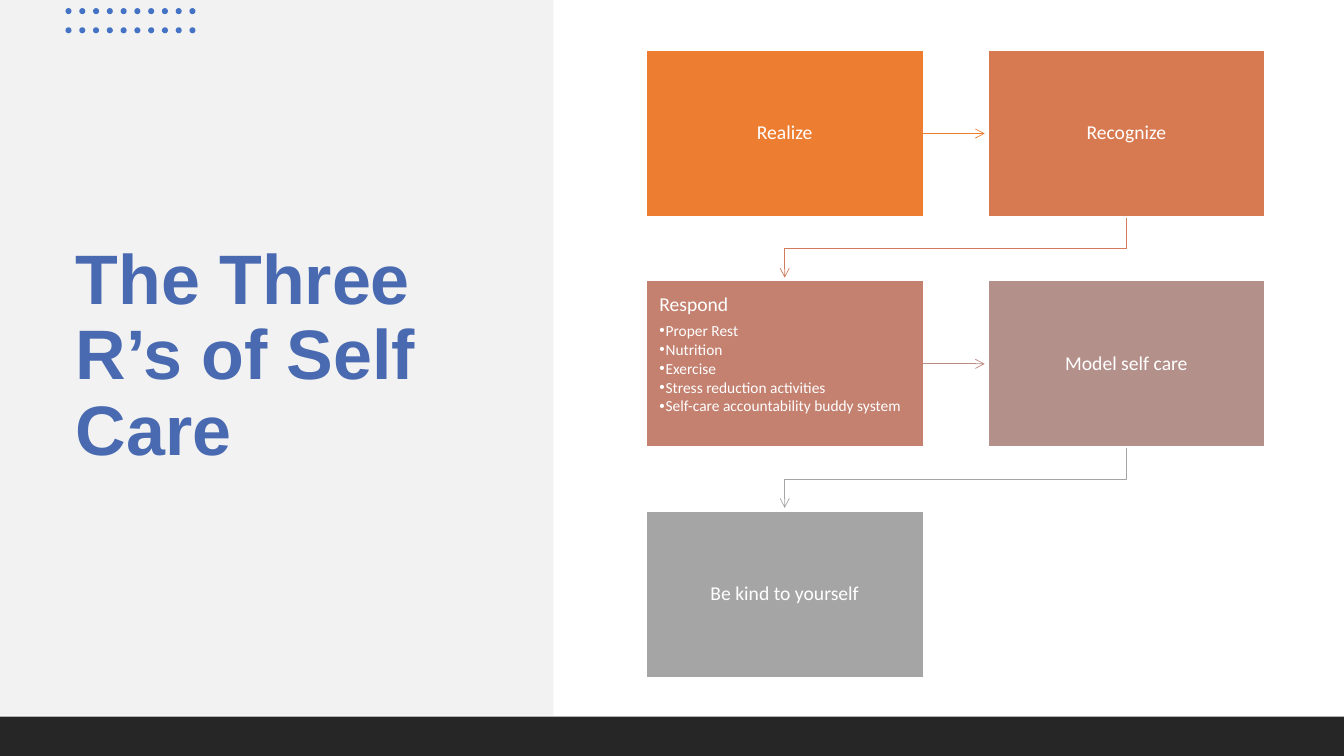
"""Build the self care slide: a title panel beside a snaking flow of cards."""
from dataclasses import dataclass
from itertools import product

from lxml.etree import SubElement
from pptx import Presentation
from pptx.dml.color import RGBColor
from pptx.enum.shapes import MSO_CONNECTOR, MSO_SHAPE
from pptx.enum.text import MSO_ANCHOR, MSO_AUTO_SIZE, PP_ALIGN
from pptx.oxml.ns import qn
from pptx.shapes.base import BaseShape
from pptx.slide import Slide
from pptx.util import Pt

LEFT, TOP = 461.5, 36
WIDE, HIGH = 198, 118.8
STEP_X, STEP_Y = 244.1, 164.5
GAP = 2.2


@dataclass(frozen=True)
class Card:
    text: str
    fill: str
    line: str = ""
    items: tuple[str, ...] = ()


@dataclass(frozen=True)
class Block:
    left: float
    top: float
    wide: float
    high: float
    fill: str
    kind: MSO_SHAPE = MSO_SHAPE.RECTANGLE


CARDS = (
    Card("Realize", "ED7D31", "ED7D31"),
    Card("Recognize", "D87A51", "D17B5C"),
    Card("Respond", "C48170", "B98A82", (
        "Proper Rest",
        "Nutrition",
        "Exercise",
        "Stress reduction activities",
        "Self-care accountability buddy system",
    )),
    Card("Model self care", "B4908B", "A5A5A5"),
    Card("Be kind to yourself", "A5A5A5"),
)
PANELS = (
    Block(0, 0, 395.3, 511.2, "F2F2F2"),
    Block(0, 511.9, 960, 28.1, "262626"),
)
DOTS = tuple(
    Block(46.8 + 9.84 * col, 5.8 + 13.7 * row, 4.3, 4.3, "4472C4", MSO_SHAPE.OVAL)
    for col, row in product(range(10), range(2))
)


def color(code: str) -> RGBColor:
    return RGBColor.from_string(code)


def paint(shape: BaseShape, code: str) -> None:
    shape.fill.solid()
    shape.fill.fore_color.rgb = color(code)


def place(shape: BaseShape, left: float, top: float, wide: float, high: float) -> None:
    shape.left, shape.top = Pt(left), Pt(top)
    shape.width, shape.height = Pt(wide), Pt(high)


def raise_top(slide: Slide, shape: BaseShape) -> None:
    slide.shapes.element.append(shape.element)


def add_block(slide: Slide, block: Block) -> None:
    shape = slide.shapes.add_shape(
        block.kind, Pt(block.left), Pt(block.top), Pt(block.wide), Pt(block.high))
    shape.shadow.inherit = False
    paint(shape, block.fill)
    shape.line.fill.background()


def set_title(slide: Slide) -> None:
    title = slide.shapes.title
    raise_top(slide, title)
    place(title, 46.8, 95, 305.3, 320.4)
    frame = title.text_frame
    frame.text = "The Three R’s of Self Care"
    frame.auto_size = MSO_AUTO_SIZE.NONE
    frame.vertical_anchor = MSO_ANCHOR.MIDDLE
    para = frame.paragraphs[0]
    para.alignment = PP_ALIGN.LEFT
    para.line_spacing = 0.9
    font = para.runs[0].font
    font.name, font.size, font.bold = "Arial", Pt(50), True
    font.color.rgb = color("496AB1")


def corner(index: int) -> tuple[float, float]:
    row, col = divmod(index, 2)
    return LEFT + STEP_X * col, TOP + STEP_Y * row


def add_card(slide: Slide, index: int, card: Card) -> BaseShape:
    if card.items:
        shape = slide.placeholders[1]
        raise_top(slide, shape)
    else:
        shape = slide.shapes.add_shape(MSO_SHAPE.RECTANGLE, 0, 0, 0, 0)
        shape.shadow.inherit = False
    place(shape, *corner(index), WIDE, HIGH)
    paint(shape, card.fill)
    shape.line.color.rgb = color("FFFFFF")
    shape.line.width = Pt(1)
    frame = shape.text_frame
    frame.text = "\n".join((card.text, *card.items))
    frame.word_wrap = True
    frame.auto_size = MSO_AUTO_SIZE.NONE
    frame.vertical_anchor = MSO_ANCHOR.TOP if card.items else MSO_ANCHOR.MIDDLE
    frame.margin_left = frame.margin_right = Pt(9.4)
    frame.margin_top = frame.margin_bottom = Pt(10.1)
    for rank, para in enumerate(frame.paragraphs):
        size, after = (11, 1.65) if rank else (14, 4.9)
        props = para._p.get_or_add_pPr()
        props.set("marL", str(Pt(4.5) if rank else 0))
        props.set("indent", str(Pt(-4.5) if rank else 0))
        if rank:
            para.level = 1
            SubElement(props, qn("a:buChar")).set("char", "•")
        else:
            SubElement(props, qn("a:buNone"))
        para.alignment = PP_ALIGN.LEFT if card.items else PP_ALIGN.CENTER
        para.line_spacing = 0.9
        para.space_before, para.space_after = Pt(0), Pt(after)
        font = para.runs[0].font
        font.name, font.size = "Calibri", Pt(size)
        font.color.rgb = color("FFFFFF")
    return shape


def add_link(slide: Slide, index: int, box: BaseShape, code: str) -> None:
    left, top = corner(index)
    if index % 2 == 0:
        mid = Pt(top + HIGH / 2)
        link = slide.shapes.add_connector(
            MSO_CONNECTOR.STRAIGHT, Pt(left + WIDE), mid, Pt(left + STEP_X - GAP), mid)
        link.begin_connect(box, 3)
        SubElement(link.element.spPr, qn("a:effectLst"))
    else:
        start, base = left + WIDE / 2, top + HIGH
        end, turn = start - STEP_X, top + (HIGH + STEP_Y) / 2
        path_pen = slide.shapes.build_freeform(Pt(start), Pt(base + 0.6))
        path_pen.add_line_segments(
            [(Pt(start), Pt(turn)), (Pt(end), Pt(turn)), (Pt(end), Pt(top + STEP_Y - GAP))],
            close=False)
        link = path_pen.convert_to_shape()
        link.shadow.inherit = False
        link.fill.background()
    link.line.color.rgb = color(code)
    link.line.width = Pt(0.5)
    SubElement(link.element.spPr.find(qn("a:ln")), qn("a:tailEnd")).set("type", "arrow")


def main() -> None:
    deck = Presentation()
    deck.slide_width, deck.slide_height = Pt(960), Pt(540)
    slide = deck.slides.add_slide(deck.slide_layouts[1])
    for block in PANELS + DOTS:
        add_block(slide, block)
    set_title(slide)
    for index, card in enumerate(CARDS):
        box = add_card(slide, index, card)
        if card.line:
            add_link(slide, index, box, card.line)
    deck.save("out.pptx")


if __name__ == "__main__":
    main()
